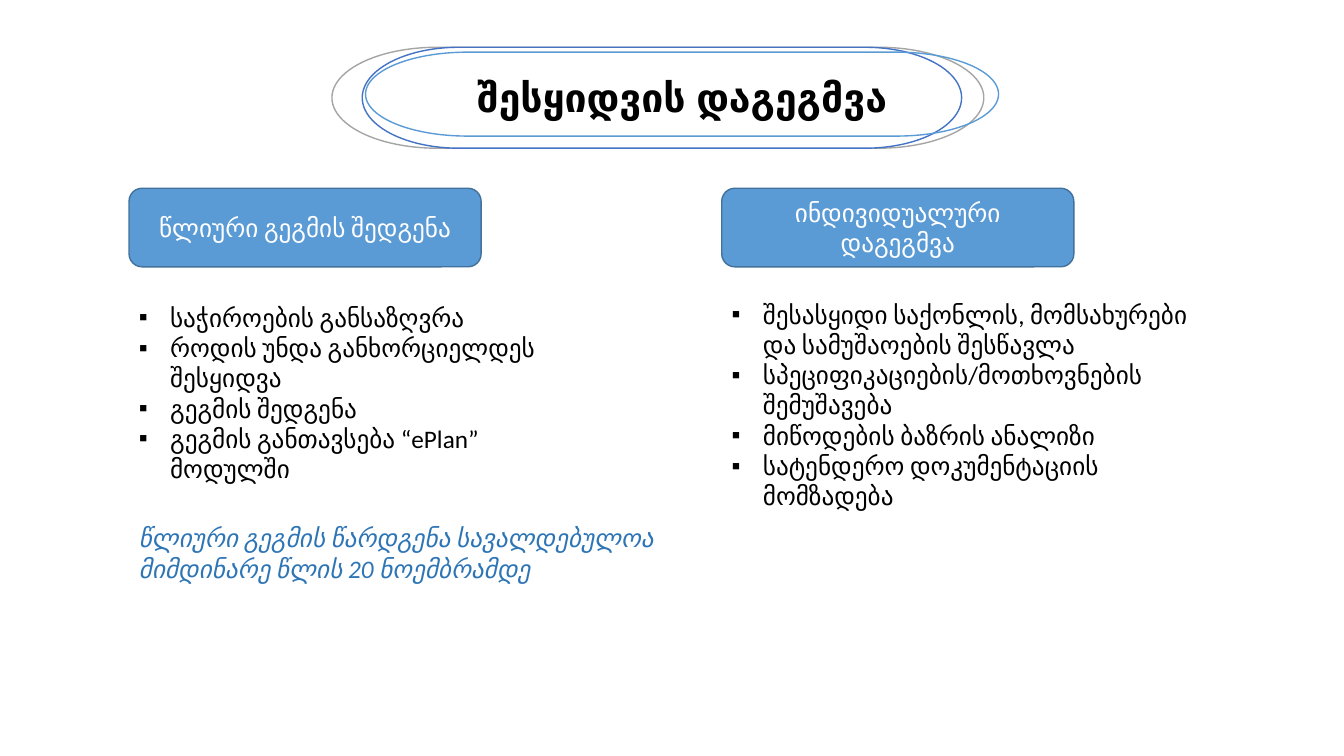
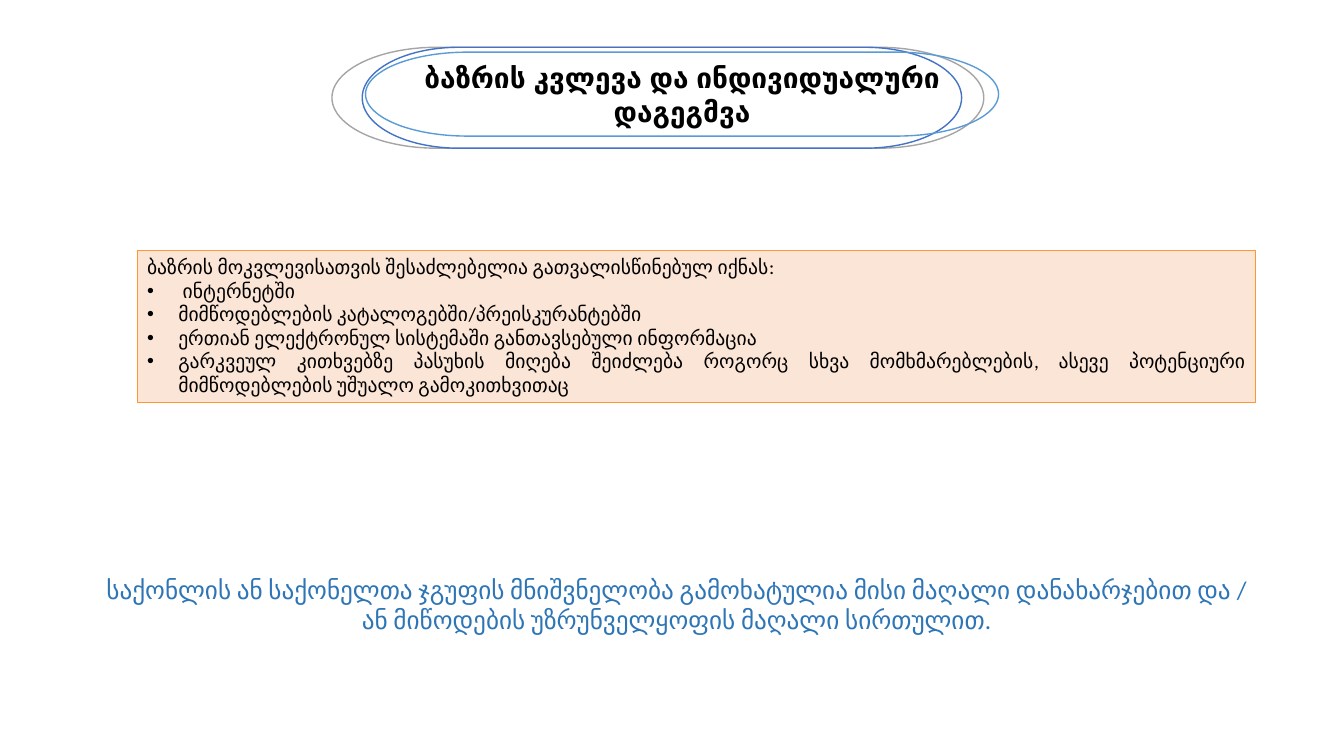
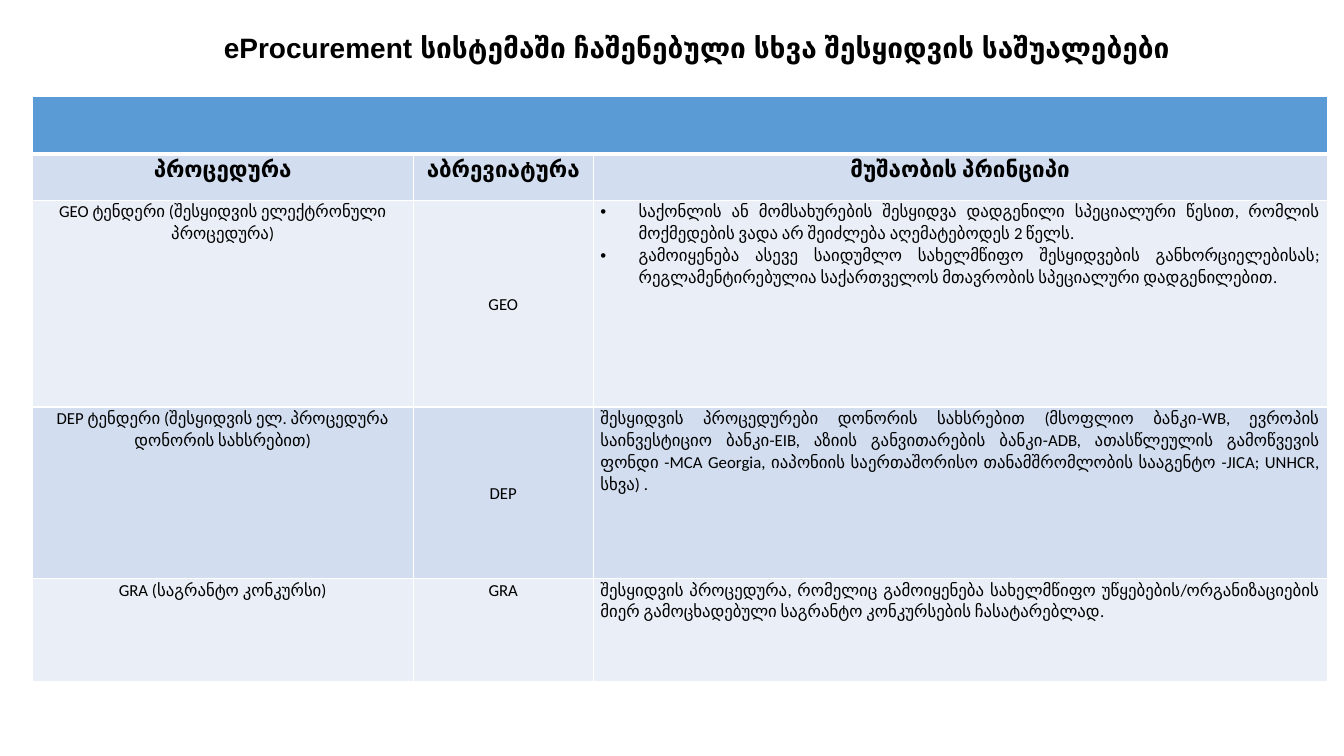
from dataclasses import dataclass

from lxml.etree import SubElement
from pptx import Presentation
from pptx.dml.color import RGBColor
from pptx.enum.shapes import MSO_SHAPE
from pptx.enum.text import MSO_ANCHOR, MSO_AUTO_SIZE, PP_ALIGN
from pptx.oxml.ns import qn
from pptx.util import Inches, Pt

SLIDE_WIDTH, SLIDE_HEIGHT = Inches(13.33), Inches(7.5)
TITLE_ONLY = 5


@dataclass(frozen=True)
class Theme:
    heading_font: str = "Arial"
    body_font: str = "Calibri"
    black: str = "000000"
    white: str = "FFFFFF"
    blue: str = "5B9BD5"
    blue_edge: str = "42719B"
    indigo: str = "4472C4"
    gray: str = "A5A5A5"
    note_blue: str = "2E75B6"
    peach: str = "FBE5D6"
    orange: str = "FF9735"
    band_dark: str = "D2DEEF"
    band_light: str = "EAEFF7"
    title_large: int = 28
    title: int = 20
    body: int = 18
    table_header: int = 16
    list_text: int = 14
    table_text: int = 12


THEME = Theme()


# Lengths: the slide is a grid of 100 columns and 100 rows
def columns(count):
    return int(SLIDE_WIDTH * count / 100)


def rows(count):
    return int(SLIDE_HEIGHT * count / 100)


def box(left, top, width, height):
    return columns(left), rows(top), columns(width), rows(height)


# Text
def set_bullet(paragraph, character, indent):
    properties = paragraph._p.get_or_add_pPr()
    properties.set("marL", str(Inches(indent)))
    properties.set("indent", str(-Inches(indent)))
    SubElement(properties, qn("a:buFont")).set("typeface", THEME.heading_font)
    SubElement(properties, qn("a:buChar")).set("char", character)


def write(frame, lines, size, color=THEME.black, font=THEME.body_font, bold=False,
          italic=False, align=PP_ALIGN.LEFT, bullet=None, indent=0.31,
          first_bullet=0, spacing=None):
    frame.word_wrap = True
    for index, line in enumerate(lines):
        paragraph = frame.add_paragraph() if index else frame.paragraphs[0]
        if bullet and index >= first_bullet:
            set_bullet(paragraph, bullet, indent)
        paragraph.alignment = align
        if spacing:
            paragraph.line_spacing = spacing
        run = paragraph.add_run()
        run.text = line
        run.font.name, run.font.size = font, Pt(size)
        run.font.bold, run.font.italic = bold, italic
        run.font.color.rgb = RGBColor.from_string(color)


def add_text(slide, area, lines, size=THEME.body, **style):
    shape = slide.shapes.add_textbox(*area)
    write(shape.text_frame, lines, size, **style)


# Shapes
def add_panel(slide, kind, area, line, fill=None, line_width=1):
    shape = slide.shapes.add_shape(kind, *area)
    shape.shadow.inherit = False
    if fill:
        shape.fill.solid()
        shape.fill.fore_color.rgb = RGBColor.from_string(fill)
    else:
        shape.fill.background()
    shape.line.color.rgb = RGBColor.from_string(line)
    shape.line.width = Pt(line_width)
    return shape


def add_label(slide, area, text):
    shape = add_panel(slide, MSO_SHAPE.ROUNDED_RECTANGLE, area, THEME.blue_edge, THEME.blue)
    shape.text_frame.vertical_anchor = MSO_ANCHOR.MIDDLE
    write(shape.text_frame, [text], THEME.body, THEME.white, align=PP_ALIGN.CENTER)


# Titles
def set_title(slide, area, text, size=THEME.title, align=PP_ALIGN.CENTER, spacing=None):
    title = slide.shapes.title
    title.left, title.top, title.width, title.height = area
    title.text_frame.auto_size = MSO_AUTO_SIZE.NONE
    title.text_frame.vertical_anchor = MSO_ANCHOR.MIDDLE
    write(title.text_frame, [text], size, font=THEME.heading_font, bold=True,
          align=align, spacing=spacing)
    # Keep the title in front of the shapes drawn so far
    slide.shapes._spTree.append(title._element)


def add_framed_title(slide, text, size=THEME.title, drop=0):
    for area, line, fill in (
        (box(24.7, 6.25, 48.5, 13.35), THEME.gray, None),
        (box(26.95, 6.25, 44.6, 13.35), THEME.indigo, THEME.white),
        (box(27.2, 6.9, 47.1, 11.1), THEME.blue, None),
    ):
        add_panel(slide, MSO_SHAPE.FLOWCHART_TERMINATOR, area, line, fill)
    set_title(slide, box(29.4, 6.9 + drop, 42.7, 11.1), text, size)


# Table
def style_cell(cell, fill, bottom_width=1):
    properties = cell._tc.get_or_add_tcPr()
    for side in "LRTB":
        border = SubElement(properties, qn(f"a:ln{side}"))
        border.set("w", str(Pt(bottom_width if side == "B" else 1)))
        SubElement(SubElement(border, qn("a:solidFill")), qn("a:srgbClr")).set("val", THEME.white)
    cell.fill.solid()
    cell.fill.fore_color.rgb = RGBColor.from_string(fill)
    cell.margin_left = cell.margin_right = Inches(0.07)
    cell.margin_top = cell.margin_bottom = 0


def add_procedure_table(slide, area, widths, heights, header, procedures):
    table = slide.shapes.add_table(len(heights), len(widths), *area).table
    table.first_row = table.horz_banding = False
    for column, width in zip(table.columns, widths):
        column.width = columns(width)
    for row, height in zip(table.rows, heights):
        row.height = rows(height)

    # Band across the top
    for cell in table.rows[0].cells:
        style_cell(cell, THEME.blue, bottom_width=3)
    table.cell(0, 0).merge(table.cell(0, len(widths) - 1))

    # Column heads, then one row per procedure
    for column, text in enumerate(header):
        cell = table.cell(1, column)
        style_cell(cell, THEME.band_dark)
        write(cell.text_frame, [text], THEME.table_header, bold=True,
              align=PP_ALIGN.CENTER, spacing=1.07)
    for row, (name, code, anchor, principles) in enumerate(procedures, start=2):
        fill = THEME.band_dark if row % 2 else THEME.band_light
        for column, lines in enumerate(([name], [code], principles)):
            cell = table.cell(row, column)
            style_cell(cell, fill)
            is_principle = column == 2
            write(cell.text_frame, lines, THEME.table_text, spacing=1.07,
                  align=PP_ALIGN.JUSTIFY if is_principle else PP_ALIGN.CENTER,
                  bullet="•" if len(lines) > 1 else None, indent=0.38)
        table.cell(row, 1).vertical_anchor = anchor


# Slides
def build_planning(slide):
    add_framed_title(slide, "შესყიდვის დაგეგმვა", THEME.title_large, drop=0.4)
    left, right = 9.6, 53.7
    for column, label, top, width, height, steps in (
        (left, "წლიური გეგმის შედგენა", 39.3, 32.85, 25.6, [
            "საჭიროების განსაზღვრა",
            "როდის უნდა განხორციელდეს შესყიდვა",
            "გეგმის შედგენა",
            "გეგმის განთავსება “ePlan” მოდულში",
        ]),
        (right, "ინდივიდუალური დაგეგმვა", 38.9, 36.3, 29.6, [
            "შესასყიდი საქონლის, მომსახურები და სამუშაოების შესწავლა",
            "სპეციფიკაციების/მოთხოვნების შემუშავება",
            "მიწოდების ბაზრის ანალიზი",
            "სატენდერო დოკუმენტაციის მომზადება",
        ]),
    ):
        add_label(slide, box(column, 24.9, 26.2, 10.4), label)
        add_text(slide, box(column, top, width, height), steps, bullet="▪")
    add_text(slide, box(left, 68.5, 42.3, 9.5),
             ["წლიური გეგმის წარდგენა სავალდებულოა მიმდინარე წლის 20 ნოემბრამდე"],
             color=THEME.note_blue, italic=True)


def build_research(slide):
    add_framed_title(slide, "ბაზრის კვლევა და ინდივიდუალური დაგეგმვა")
    sources = add_panel(slide, MSO_SHAPE.RECTANGLE, box(10.2, 33.1, 83.25, 20.1),
                        THEME.orange, THEME.peach, line_width=0.75)
    sources.text_frame.vertical_anchor = MSO_ANCHOR.TOP
    write(sources.text_frame, [
        "ბაზრის მოკვლევისათვის შესაძლებელია გათვალისწინებულ იქნას:",
        " ინტერნეტში",
        "მიმწოდებლების კატალოგებში/პრეისკურანტებში",
        "ერთიან ელექტრონულ სისტემაში განთავსებული ინფორმაცია",
        "გარკვეულ კითხვებზე პასუხის მიღება შეიძლება როგორც სხვა მომხმარებლების, "
        "ასევე პოტენციური მიმწოდებლების უშუალო გამოკითხვითაც",
    ], THEME.list_text, align=PP_ALIGN.JUSTIFY, bullet="•", first_bullet=1)
    add_text(slide, box(6.2, 75.3, 88.3, 9.5),
             ["საქონლის ან საქონელთა ჯგუფის მნიშვნელობა გამოხატულია მისი მაღალი "
              "დანახარჯებით და / ან მიწოდების უზრუნველყოფის მაღალი სირთულით."],
             color=THEME.note_blue, align=PP_ALIGN.CENTER)


def build_procedures(slide):
    set_title(slide, box(15.9, 2.5, 82, 8),
              "eProcurement სისტემაში ჩაშენებული სხვა შესყიდვის საშუალებები",
              align=PP_ALIGN.LEFT, spacing=0.9)
    add_procedure_table(
        slide, box(2.4, 12.8, 96.35, 77.35),
        widths=(28.35, 13.4, 54.6), heights=(7.6, 6.1, 27.35, 22.7, 13.6),
        header=("პროცედურა", "აბრევიატურა", "მუშაობის პრინციპი"),
        procedures=(
            ("GEO ტენდერი (შესყიდვის ელექტრონული პროცედურა)", "GEO", MSO_ANCHOR.MIDDLE, [
                "საქონლის ან მომსახურების შესყიდვა დადგენილი სპეციალური წესით, "
                "რომლის მოქმედების ვადა არ შეიძლება აღემატებოდეს 2 წელს.",
                "გამოიყენება ასევე საიდუმლო სახელმწიფო შესყიდვების განხორციელებისას; "
                "რეგლამენტირებულია საქართველოს მთავრობის სპეციალური დადგენილებით.",
            ]),
            ("DEP ტენდერი (შესყიდვის ელ. პროცედურა დონორის სახსრებით)", "DEP",
             MSO_ANCHOR.MIDDLE, [
                "შესყიდვის პროცედურები დონორის სახსრებით (მსოფლიო ბანკი-WB, ევროპის "
                "საინვესტიციო ბანკი-EIB, აზიის განვითარების ბანკი-ADB, ათასწლეულის "
                "გამოწვევის ფონდი -MCA Georgia, იაპონიის საერთაშორისო თანამშრომლობის "
                "სააგენტო -JICA; UNHCR, სხვა) .",
             ]),
            ("GRA (საგრანტო კონკურსი)", "GRA", MSO_ANCHOR.TOP, [
                "შესყიდვის პროცედურა, რომელიც გამოიყენება სახელმწიფო "
                "უწყებების/ორგანიზაციების მიერ გამოცხადებული საგრანტო კონკურსების "
                "ჩასატარებლად.",
            ]),
        ),
    )


def main():
    presentation = Presentation()
    presentation.slide_width, presentation.slide_height = SLIDE_WIDTH, SLIDE_HEIGHT
    layout = presentation.slide_layouts[TITLE_ONLY]
    for build in (build_planning, build_research, build_procedures):
        build(presentation.slides.add_slide(layout))
    presentation.save("out.pptx")


if __name__ == "__main__":
    main()
